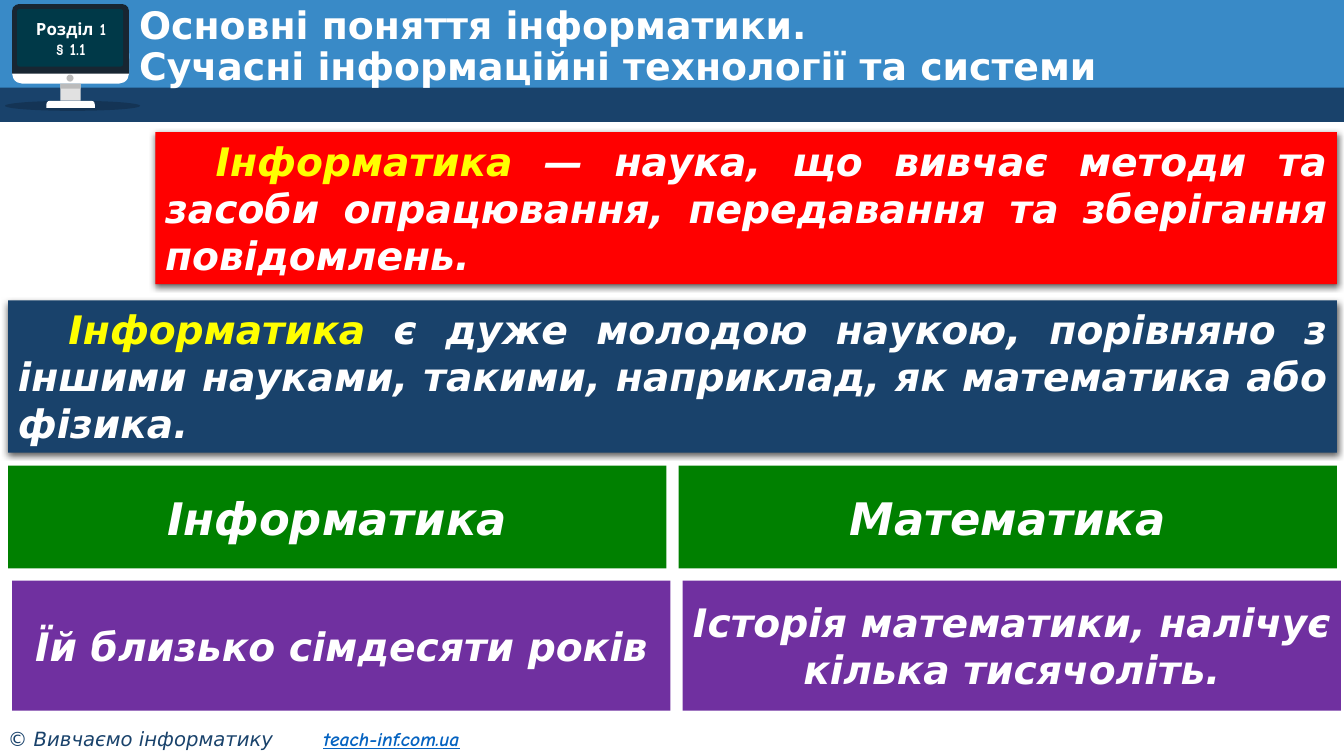
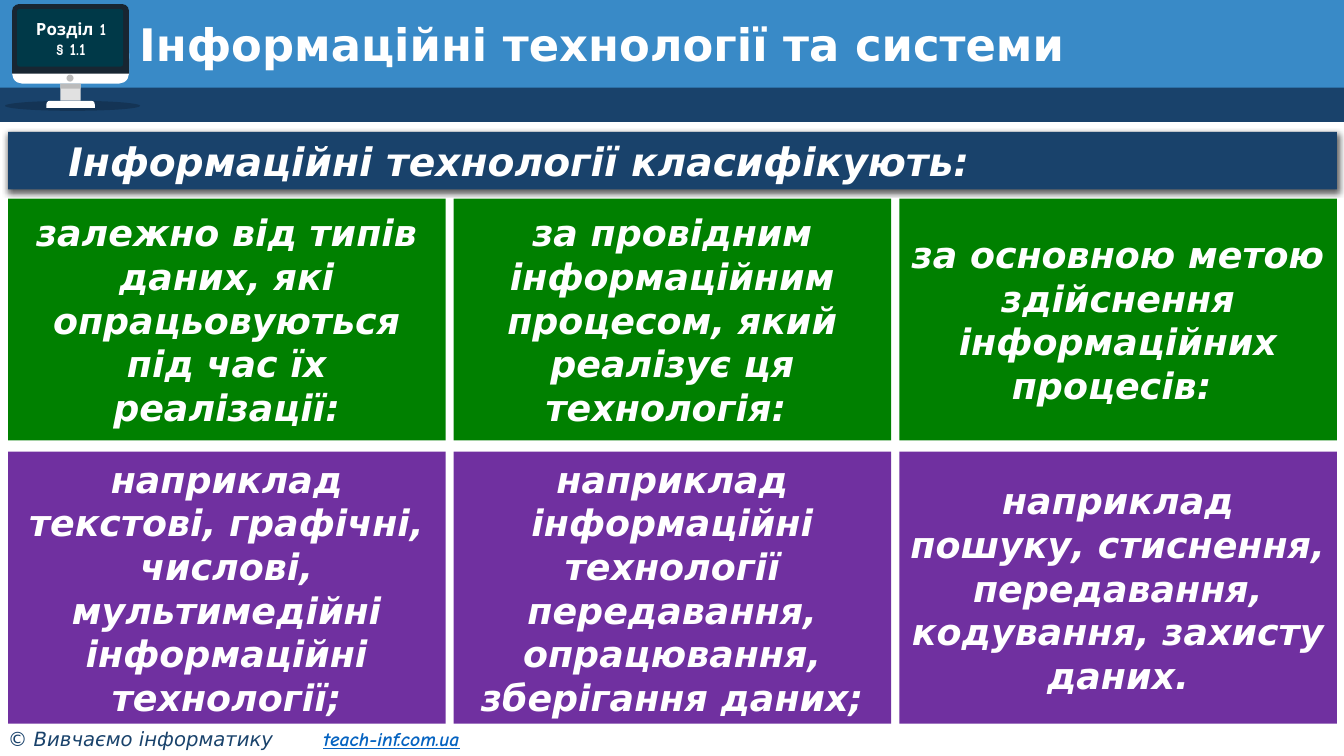
import copy
from dataclasses import dataclass, field

import pptx
import pptx.dml.color
import pptx.enum.shapes
import pptx.enum.text
import pptx.oxml
import pptx.oxml.ns
import pptx.util
from pptx.util import Inches

RGBColor = pptx.dml.color.RGBColor
SHAPE = pptx.enum.shapes.MSO_SHAPE
ANCHOR = pptx.enum.text.MSO_ANCHOR
ALIGN = pptx.enum.text.PP_ALIGN
AUTO = pptx.enum.text.MSO_AUTO_SIZE
qn = pptx.oxml.ns.qn

WHITE = RGBColor(0xFF, 0xFF, 0xFF)
BLACK = RGBColor(0x00, 0x00, 0x00)
SKY = RGBColor(0x39, 0x8A, 0xC7)
NAVY = RGBColor(0x19, 0x42, 0x6B)
BEZEL = RGBColor(0x18, 0x26, 0x32)
SCREEN = RGBColor(0x00, 0x39, 0x48)
STAND = RGBColor(0xE1, 0xE1, 0xE1)
GREY = RGBColor(0xBB, 0xBB, 0xBB)
LINK = RGBColor(0x05, 0x63, 0xC1)
RED = RGBColor(0xFF, 0x00, 0x00)
YELLOW = RGBColor(0xFF, 0xFF, 0x00)
GREEN = RGBColor(0x00, 0x80, 0x00)
PURPLE = RGBColor(0x70, 0x30, 0xA0)

BODY_FONT = "DejaVu Sans"
HAND_FONT = "Comic Neue"
BOLD = {"name": BODY_FONT, "bold": True}
BOLD_ITALIC = BOLD | {"italic": True}
HAND = {"name": HAND_FONT, "bold": True}
FOOTER = {"name": BODY_FONT, "italic": True}
FOOTER_LINK = HAND | {"italic": True, "underline": True}

SLIDE_W, SLIDE_H = 13.33, 7.5
MARGIN, CONTENT_W = 0.08, 13.18


@dataclass(frozen=True)
class Box:
    left: float
    top: float
    width: float
    height: float

    def lengths(self) -> tuple:
        return tuple(Inches(v) for v in (self.left, self.top, self.width, self.height))


@dataclass(frozen=True)
class Part:
    kind: int
    box: Box
    color: RGBColor
    adjust: tuple = ()
    alpha: int = 100


@dataclass(frozen=True)
class Run:
    text: str
    size: float
    color: RGBColor = WHITE
    fmt: dict = field(default_factory=lambda: BOLD_ITALIC)


@dataclass(frozen=True)
class CardRow:
    left: float
    top: float
    width: float
    height: float
    gap: float
    color: RGBColor
    size: float
    texts: tuple


BACKDROP = (
    Part(SHAPE.RECTANGLE, Box(0, 0, SLIDE_W, 0.91), SKY),
    Part(SHAPE.RECTANGLE, Box(0, 0.87, SLIDE_W, 0.34), NAVY),
    Part(SHAPE.OVAL, Box(0.05, 1, 1.34, 0.1), BLACK, alpha=20),
    Part(SHAPE.ROUNDED_RECTANGLE, Box(0.12, 0.43, 1.16, 0.4), WHITE, (0.25,)),
    Part(SHAPE.ROUND_2_SAME_RECTANGLE, Box(0.12, 0.04, 1.16, 0.69), BEZEL, (0.1, 0)),
    Part(SHAPE.RECTANGLE, Box(0.6, 0.83, 0.2, 0.17), STAND),
    Part(SHAPE.RECTANGLE, Box(0.6, 0.83, 0.2, 0.05), GREY),
    Part(SHAPE.ROUND_2_SAME_RECTANGLE, Box(0.46, 1, 0.48, 0.07), WHITE, (0.5, 0)),
    Part(SHAPE.OVAL, Box(0.66, 0.74, 0.07, 0.07), GREY),
    Part(SHAPE.ROUNDED_RECTANGLE, Box(0.17, 0.09, 1.05, 0.57), SCREEN, (0.04,)),
)


def xml(tag: str, **attrs):
    el = pptx.oxml.parse_xml(f"<{tag} {pptx.oxml.ns.nsdecls('a')}/>")
    for name, value in attrs.items():
        el.set(name, str(value))
    return el


def add_part(s, part: Part):
    sp = s.shapes.add_shape(part.kind, *part.box.lengths())
    sp.shadow.inherit = False
    sp.fill.solid()
    sp.fill.fore_color.rgb = part.color
    sp.line.fill.background()
    for i, value in enumerate(part.adjust):
        sp.adjustments[i] = value
    if part.alpha < 100:
        color = next(sp.element.spPr.iter(qn("a:srgbClr")))
        color.append(xml("a:alpha", val=part.alpha * 1000))
    return sp


def add_runs(p, runs: tuple) -> None:
    for run in runs:
        for i, line in enumerate(run.text.split("\n")):
            if i:
                p.add_line_break()
            r = p.add_run()
            r.text = line
            for name, value in run.fmt.items():
                setattr(r.font, name, value)
            r.font.size = pptx.util.Pt(run.size)
            r.font.color.rgb = run.color
    for br in p._p.findall(qn("a:br")):
        br.append(copy.deepcopy(p.runs[0]._r.rPr))


def set_frame(tf, **values) -> None:
    for name, value in ({"word_wrap": True} | values).items():
        setattr(tf, name, value)


def add_banner(s, box: Box, color: RGBColor, *runs: Run) -> None:
    sp = add_part(s, Part(SHAPE.RECTANGLE, box, color))
    shadow = xml("a:outerShdw", blurRad=57150, dist=19050, dir=5400000,
                 algn="ctr", rotWithShape=0)
    black = xml("a:srgbClr", val="000000")
    black.append(xml("a:alpha", val=63000))
    shadow.append(black)
    sp.element.spPr.find(qn("a:effectLst")).append(shadow)
    set_frame(sp.text_frame, vertical_anchor=ANCHOR.TOP, auto_size=AUTO.SHAPE_TO_FIT_TEXT)
    p = sp.text_frame.paragraphs[0]
    p.alignment = ALIGN.JUSTIFY
    p._p.get_or_add_pPr().set("indent", str(Inches(0.5)))
    add_runs(p, runs)


def add_cards(s, row: CardRow) -> None:
    for i, text in enumerate(row.texts):
        left = row.left + i * (row.width + row.gap)
        box = Box(left, row.top, row.width, row.height)
        sp = add_part(s, Part(SHAPE.RECTANGLE, box, row.color))
        set_frame(sp.text_frame, vertical_anchor=ANCHOR.MIDDLE)
        p = sp.text_frame.paragraphs[0]
        p.alignment = ALIGN.CENTER
        add_runs(p, (Run(text, row.size),))


def build_layout(s, layout) -> None:
    shapes = [add_part(s, part) for part in BACKDROP]

    footer = s.shapes.add_textbox(*Box(-0.02, 7.16, 5.23, 0.34).lengths())
    set_frame(footer.text_frame, auto_size=AUTO.SHAPE_TO_FIT_TEXT)
    p = footer.text_frame.paragraphs[0]
    tabs = xml("a:tabLst")
    tabs.append(xml("a:tab", pos=Inches(3.13), algn="l"))
    p._p.get_or_add_pPr().append(tabs)
    add_runs(p, (Run("© Вивчаємо інформатику\t", 14, NAVY, FOOTER),
                 Run("teach-inf.com.ua", 14, LINK, FOOTER_LINK)))

    label = s.shapes.add_textbox(*Box(0.13, 0.09, 1.15, 0.59).lengths())
    tf = label.text_frame
    set_frame(tf, vertical_anchor=ANCHOR.MIDDLE)
    for i, text in enumerate(("Розділ 1", "§ 1.1")):
        p = tf.add_paragraph() if i else tf.paragraphs[0]
        p.alignment = ALIGN.CENTER
        add_runs(p, (Run(text, 12, WHITE, HAND),))

    for sp in (*shapes, footer, label):
        layout.shapes.element.append(sp.element)


def add_slide(prs, layout, title: str, size: float):
    s = prs.slides.add_slide(layout)
    sp = s.shapes.title
    sp.left, sp.top, sp.width, sp.height = Box(1.28, 0.18, 9.9, 0.58).lengths()
    set_frame(sp.text_frame, vertical_anchor=ANCHOR.MIDDLE, auto_size=AUTO.NONE)
    p = sp.text_frame.paragraphs[0]
    p.alignment = ALIGN.LEFT
    p.line_spacing = 0.9
    add_runs(p, (Run(title, size, WHITE, BOLD),))
    return s


def main() -> None:
    prs = pptx.Presentation()
    prs.slide_width, prs.slide_height = Inches(SLIDE_W), Inches(SLIDE_H)
    layout = prs.slide_layouts[5]

    s = add_slide(prs, layout, "Основні поняття інформатики.\n"
                  "Сучасні інформаційні технології та системи", 27)
    build_layout(s, layout)
    term = Run("Інформатика", 28, YELLOW)
    add_banner(s, Box(MARGIN, 2.98, CONTENT_W, 1.51), NAVY, term,
               Run(" є дуже молодою наукою, порівняно з іншими науками, "
                   "такими, наприклад, як математика або фізика.", 28))
    add_banner(s, Box(1.54, 1.31, 11.72, 1.51), RED, term,
               Run(" — наука, що вивчає методи та засоби опрацювання, "
                   "передавання та зберігання повідомлень.", 28))
    add_cards(s, CardRow(MARGIN, 4.62, 6.53, 1.02, 0.12, GREEN, 32,
                         ("Інформатика", "Математика")))
    add_cards(s, CardRow(0.12, 5.76, 6.53, 1.29, 0.12, PURPLE, 28, (
        "Їй близько сімдесяти років",
        "Історія математики, налічує кілька тисячоліть.")))

    s = add_slide(prs, layout, "Інформаційні технології та системи", 32)
    add_banner(s, Box(MARGIN, 1.31, CONTENT_W, 0.57), NAVY,
               Run("Інформаційні технології класифікують:", 28))
    add_cards(s, CardRow(MARGIN, 1.97, 4.34, 2.4, 0.08, GREEN, 26, (
        "залежно від типів даних, які опрацьовуються під час їх реалізації:",
        "за провідним інформаційним процесом, який реалізує ця технологія: ",
        "за основною метою здійснення інформаційних процесів: ")))
    add_cards(s, CardRow(MARGIN, 4.48, 4.34, 2.7, 0.08, PURPLE, 26, (
        "наприклад текстові, графічні, числові, мультимедійні "
        "інформаційні технології;",
        "наприклад інформаційні технології передавання, опрацювання, "
        "зберігання даних;",
        "наприклад пошуку, стиснення, передавання, кодування, "
        "захисту даних.")))

    prs.save("out.pptx")


if __name__ == "__main__":
    main()
